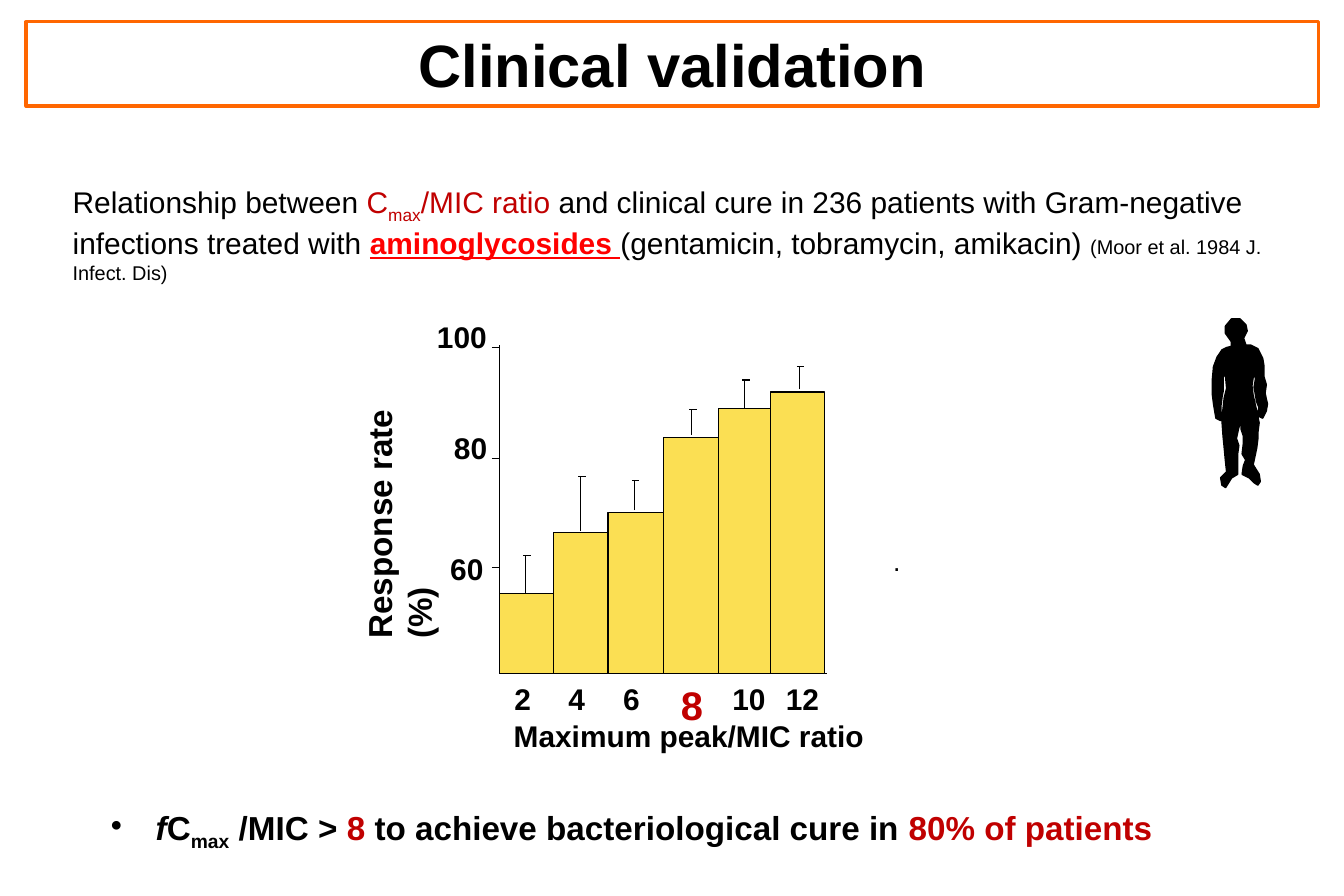
from lxml.etree import SubElement
from pptx import Presentation
from pptx.dml.color import RGBColor
from pptx.enum.shapes import MSO_CONNECTOR, MSO_SHAPE
from pptx.enum.text import MSO_ANCHOR, PP_ALIGN
from pptx.oxml.ns import qn
from pptx.util import Pt

BLACK, RED, YELLOW = "000000", "C00000", "FBDF53"


def rgb(value):
    return RGBColor.from_string(value)


def add_runs(sp, runs, wrap=False):
    tf = sp.text_frame
    tf.word_wrap = wrap
    p = tf.paragraphs[0]
    for text, size, color, style in runs:
        r = p.add_run()
        r.text = text
        r.font.name = "Arial"
        r.font.size = Pt(size)
        r.font.color.rgb = rgb(color)
        r.font.bold = "b" in style
        r.font.italic = "i" in style
        r.font.underline = "u" in style
        if "_" in style:
            r.font._element.set("baseline", "-25000")
    return p


prs = Presentation()
prs.slide_width, prs.slide_height = Pt(810), Pt(540)
s = prs.slides.add_slide(prs.slide_layouts[6])

axis_x, base_y = 301, 406
edges = [301, 333.5, 366.5, 399.75, 433.25, 464.5, 497]
tops = [357.75, 321, 309, 263.5, 246.25, 236.25]
error_bars = [
    (316.75, 357.75, 334.75), (350, 319.75, 287.25), (382.25, 307.5, 289.5),
    (417, 262, 247), (448.75, 246.25, 229), (481.75, 234.75, 221),
]

for left, right, top in zip(edges, edges[1:], tops):
    sp = s.shapes.add_shape(MSO_SHAPE.RECTANGLE, Pt(left), Pt(top), Pt(right - left), Pt(base_y - top))
    sp.shadow.inherit = False
    sp.fill.solid()
    sp.fill.fore_color.rgb = rgb(YELLOW)
    sp.line.color.rgb = rgb(BLACK)
    sp.line.width = Pt(0.75)

lines = [(axis_x, base_y, axis_x, 208), (axis_x, base_y, 498.25, base_y)]
for y in (209.5, 276.25, 342):
    lines.append((axis_x - 4.5, y, axis_x, y))
for x, bottom, top in error_bars:
    lines.append((x, bottom, x, top))
    lines.append((x - 1.5, top, x + 3, top))

for x1, y1, x2, y2 in lines:
    c = s.shapes.add_connector(MSO_CONNECTOR.STRAIGHT, Pt(x1), Pt(y1), Pt(x2), Pt(y2))
    c.line.color.rgb = rgb(BLACK)
    c.line.width = Pt(0.75)
    SubElement(c._element.spPr, qn("a:effectLst"))

labels = [
    ("2", 303, 406.75, 24.5, 18, BLACK), ("4", 335.5, 406.75, 24.5, 18, BLACK),
    ("6", 368.5, 406.75, 24.5, 18, BLACK), ("8", 403.25, 406.75, 28, 24, RED),
    ("10", 434.25, 406.75, 34.5, 18, BLACK), ("12", 466.5, 406.75, 34.5, 18, BLACK),
    ("60", 264.25, 328.25, 34.5, 18, BLACK), ("80", 266.5, 255.5, 34.5, 18, BLACK),
    ("100", 256.25, 188.75, 44.5, 18, BLACK),
    ("Maximum peak/MIC ratio", 302.5, 429, 225.5, 18, BLACK),
]
for text, x, y, width, size, color in labels:
    sp = s.shapes.add_textbox(Pt(x), Pt(y), Pt(width), Pt(size * 1.6))
    add_runs(sp, [(text, size, color, "b")])

sp = s.shapes.add_textbox(Pt(134), Pt(282.25), Pt(188.5), Pt(31))
sp.rotation = 270
add_runs(sp, [("Response rate (%)", 20, BLACK, "b")], wrap=True)

sp = s.shapes.add_textbox(Pt(531.25), Pt(324.75), Pt(19.5), Pt(26.5))
add_runs(sp, [(".", 16, BLACK, "")])

sp = s.shapes.add_textbox(Pt(36.75), Pt(107.25), Pt(756), Pt(67.5))
add_runs(sp, [
    ("Relationship between ", 18, BLACK, ""),
    ("C", 18, RED, ""),
    ("max", 18, RED, "_"),
    ("/MIC ratio ", 18, RED, ""),
    ("and clinical cure in 236 patients with Gram-negative infections treated with ", 18, BLACK, ""),
    ("aminoglycosides ", 18, "FF0000", "bu"),
    ("(gentamicin, tobramycin, amikacin) ", 18, BLACK, ""),
    ("(Moor et al. 1984 J. Infect. Dis)", 12, BLACK, ""),
], wrap=True)

outline = [
    (16, 20), (11, 13), (11, 7), (16, 1), (23, 1), (28, 6), (29, 11), (26, 17), (28, 23),
    (32, 23), (38, 26), (42, 34), (43, 40), (43, 49), (45, 56), (44, 63), (45, 68), (46, 72),
    (45, 78), (42, 84), (38, 82), (39, 75), (37, 70), (36, 64), (35, 58), (36, 52), (36, 48),
    (34, 50), (33, 57), (34, 65), (37, 78), (39, 88), (38, 96), (38, 101), (37, 109),
    (34, 123), (39, 131), (40, 137), (38, 140), (35, 138), (31, 134), (25, 131), (26, 124),
    (28, 119), (25, 114), (26, 105), (26, 99), (24, 93), (25, 84), (22, 92), (20, 101),
    (22, 107), (21, 114), (21, 131), (16, 134), (11, 142), (8, 140), (7, 134), (12, 129),
    (11, 120), (10, 109), (9, 99), (8, 85), (10, 67), (12, 59), (11, 48), (9, 49), (9, 61),
    (8, 66), (7, 74), (7, 86), (3, 84), (1, 72), (0, 64), (0, 52), (1, 41), (4, 33), (8, 27),
    (12, 25), (16, 24),
]
fb = s.shapes.build_freeform(*outline[0], scale=Pt(0.72))
fb.add_line_segments(outline[1:], close=True)
figure = fb.convert_to_shape()
figure.left, figure.top = Pt(730.75), Pt(192.25)
figure.shadow.inherit = False
figure.fill.solid()
figure.fill.fore_color.rgb = rgb(BLACK)
figure.line.color.rgb = rgb(BLACK)
figure.line.width = Pt(1)

title = s.shapes.add_shape(MSO_SHAPE.RECTANGLE, Pt(15.75), Pt(13), Pt(779), Pt(51))
title.shadow.inherit = False
title.fill.background()
title.line.color.rgb = rgb("FF6600")
title.line.width = Pt(2)
title.text_frame.vertical_anchor = MSO_ANCHOR.MIDDLE
p = add_runs(title, [("Clinical validation", 36, BLACK, "b")], wrap=True)
p.alignment = PP_ALIGN.CENTER

sp = s.shapes.add_textbox(Pt(59.75), Pt(483), Pt(690.5), Pt(54))
p = add_runs(sp, [
    ("f", 20, BLACK, "bi"),
    ("C", 20, BLACK, "b"),
    ("max", 20, BLACK, "b_"),
    (" /MIC > ", 20, BLACK, "b"),
    ("8 ", 20, RED, "b"),
    ("to achieve bacteriological cure in ", 20, BLACK, "b"),
    ("80% of patients", 20, RED, "b"),
], wrap=True)
p.space_before = Pt(4)
pPr = p._p.get_or_add_pPr()
pPr.set("marL", str(Pt(27)))
pPr.set("indent", str(-Pt(27)))
SubElement(pPr, qn("a:buChar")).set("char", "•")

prs.save("out.pptx")
